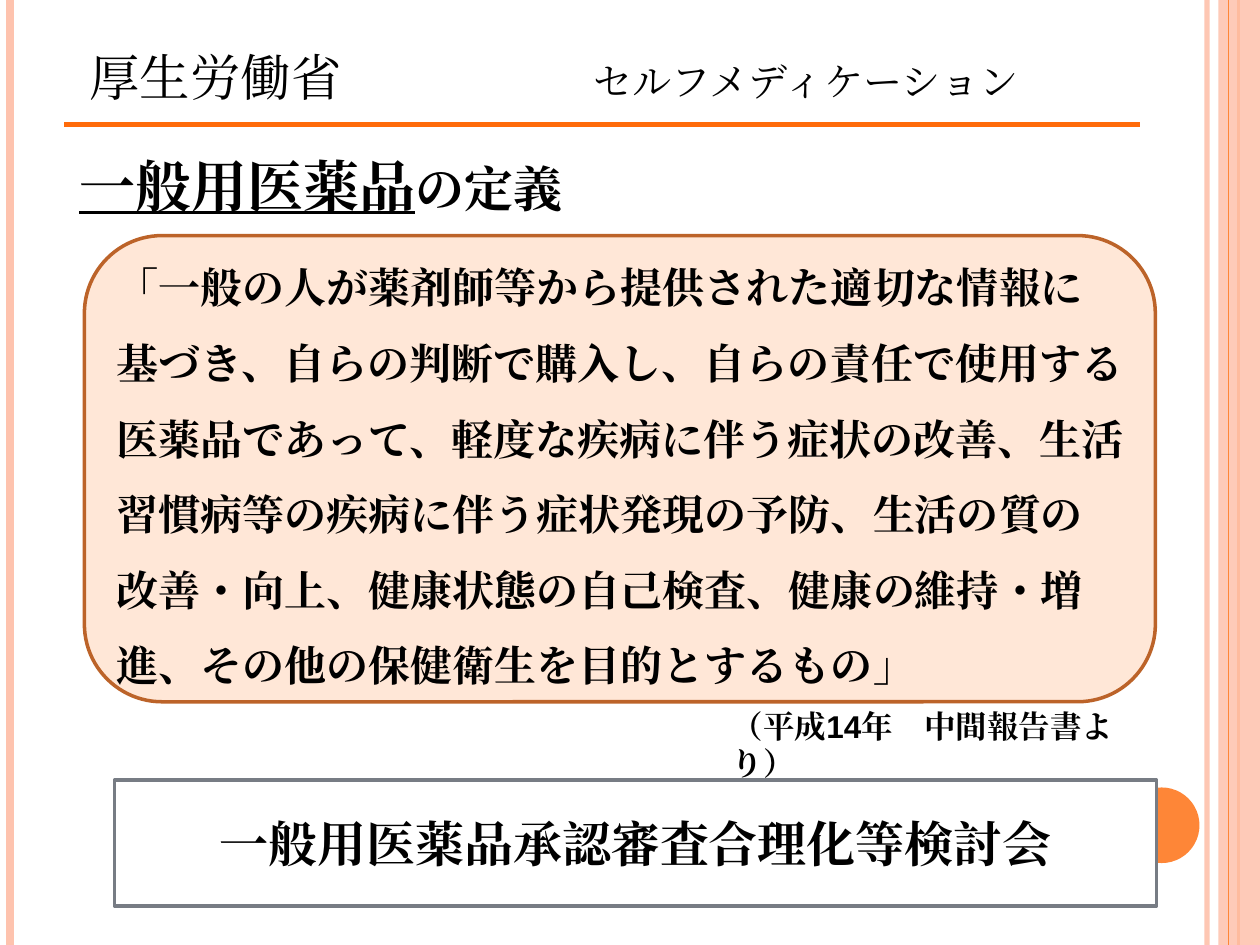
from lxml import etree
from pptx import Presentation
from pptx.dml.color import RGBColor
from pptx.enum.shapes import MSO_CONNECTOR, MSO_SHAPE
from pptx.enum.text import MSO_ANCHOR, MSO_AUTO_SIZE, PP_ALIGN
from pptx.oxml.ns import qn
from pptx.util import Emu, Pt

STRAIGHT = MSO_CONNECTOR.STRAIGHT
RECT = MSO_SHAPE.RECTANGLE
ROUNDED = MSO_SHAPE.ROUNDED_RECTANGLE
OVAL = MSO_SHAPE.OVAL
LEFT, CENTER = PP_ALIGN.LEFT, PP_ALIGN.CENTER
TOP, MIDDLE, BOTTOM = MSO_ANCHOR.TOP, MSO_ANCHOR.MIDDLE, MSO_ANCHOR.BOTTOM

PX = 9144  # 100 px to the inch
PAGE_W, PAGE_H = 1000, 750
TITLE_ONLY = 5
FONT = "Cambria"
BLACK, WHITE, GREY = "000000", "FFFFFF", "777C84"
ORANGE, PINK, RULE = "FE8637", "FEC3AE", "FF6B0A"
PEACH, BROWN = "FFE7D7", "BC6329"


def px(value):
    return Emu(value * PX)


def rgb(value):
    return RGBColor.from_string(value)


def set_alpha(shape, percent):
    for color in shape._element.spPr.iter(qn("a:srgbClr")):
        etree.SubElement(color, qn("a:alpha")).set("val", str(percent * 1000))


def add_line(page, start, end, color, width):
    line = page.shapes.add_connector(STRAIGHT, *map(px, start + end))
    line.line.color.rgb = rgb(color)
    line.line.width = Pt(width)
    etree.SubElement(line._element.spPr, qn("a:effectLst"))
    return line


def add_box(page, kind, box, fill, outline=None):
    shape = page.shapes.add_shape(kind, *map(px, box))
    shape.shadow.inherit = False
    shape.fill.solid()
    shape.fill.fore_color.rgb = rgb(fill)
    if outline:
        shape.line.color.rgb = rgb(outline)
        shape.line.width = Pt(2)
    else:
        shape.line.fill.background()
    return shape


def write(shape, spans, align=LEFT, anchor=TOP, spacing=None, bold=True):
    """Fill a shape with one paragraph of (text, size, font) spans."""
    frame = shape.text_frame
    frame.word_wrap = True
    frame.auto_size = MSO_AUTO_SIZE.NONE
    frame.vertical_anchor = anchor
    para = frame.paragraphs[0]
    para.alignment = align
    if spacing:
        para.line_spacing = spacing
    for text, size, font in spans:
        span = para.add_run()
        span.text = text
        span.font.size = Pt(size)
        span.font.bold = bold
        span.font.name = font
        span.font.color.rgb = rgb(BLACK)
        east_asian = etree.SubElement(span._r.get_or_add_rPr(), qn("a:ea"))
        east_asian.set("typeface", font)
    return para


def add_text(page, box, spans, **style):
    return write(page.shapes.add_textbox(*map(px, box)), spans, **style)


def draw_borders(page):
    # Vertical stripes at both edges, with the disc of the theme
    for x, color, width, alpha in ((958, PINK, 3, 93), (8, PINK, 4.5, 100),
                                   (983, ORANGE, 1.5, 100)):
        line = add_line(page, (x, 0), (x, PAGE_H), color, width)
        if alpha < 100:
            set_alpha(line, alpha)
    band = add_box(page, RECT, (967, 0, 33, PAGE_H), PINK)
    set_alpha(band, 87)
    add_line(page, (975, 0), (975, PAGE_H), ORANGE, 0.75)
    add_box(page, OVAL, (892, 625, 60, 60), ORANGE)


def draw_title(page, box):
    left, top, width, height = box
    title = page.shapes.title
    title.left, title.top, title.width, title.height = map(px, box)
    para = write(title, [("厚生労働省\t", 36, FONT), ("セルフメディケーション", 28, FONT)],
                 anchor=BOTTOM, bold=False)
    for span in para.runs:
        span._r.get_or_add_rPr().set("cap", "small")
    # The topic starts at a tab stop
    tabs = etree.SubElement(para._p.get_or_add_pPr(), qn("a:tabLst"))
    etree.SubElement(tabs, qn("a:tab"), pos=str(px(400)), algn="l")
    rule_y = top + height + 7
    add_line(page, (left - 10, rule_y), (left + width + 27, rule_y), RULE, 3)


def draw_definition(page, box):
    left, top, width, height = box
    add_box(page, ROUNDED, box, PEACH, BROWN)
    # Heading above the panel
    heading = add_text(page, (left - 14, top - 72, width + 30, 64),
                       [("一般用医薬品", 32, FONT), ("の定義", 28, FONT)])
    heading.runs[0].font.underline = True
    # Definition inside it
    add_text(page, (left + 16, top - 4, width - 31, height - 6), [(
        "「一般の人が薬剤師等から提供された適切な情報に基づき、自らの判断で購入し、"
        "自らの責任で使用する医薬品であって、軽度な疾病に伴う症状の改善、"
        "生活習慣病等の疾病に伴う症状発現の予防、生活の質の改善・向上、"
        "健康状態の自己検査、健康の維持・増進、その他の保健衛生を目的とするもの」",
        24, FONT)], spacing=1.5)


def draw_source(page, box):
    left, top, width, height = box
    panel = add_box(page, RECT, box, WHITE, GREY)
    write(panel, [("一般用医薬品承認審査合理化等検討会", 28, FONT)],
          align=CENTER, anchor=MIDDLE)
    # Citation above the panel
    add_text(page, (left + 480, top - 63, 328, 40),
             [("（平成", 18, FONT), ("14", 18, "Arial"),
              ("年　中間報告書より）", 18, FONT)])


def main():
    deck = Presentation()
    deck.slide_width, deck.slide_height = px(PAGE_W), px(PAGE_H)
    page = deck.slides.add_slide(deck.slide_layouts[TITLE_ONLY])
    draw_borders(page)
    draw_title(page, (61, -33, 817, 125))
    draw_definition(page, (67, 187, 850, 370))
    draw_source(page, (91, 619, 827, 100))
    deck.save("out.pptx")


if __name__ == "__main__":
    main()
